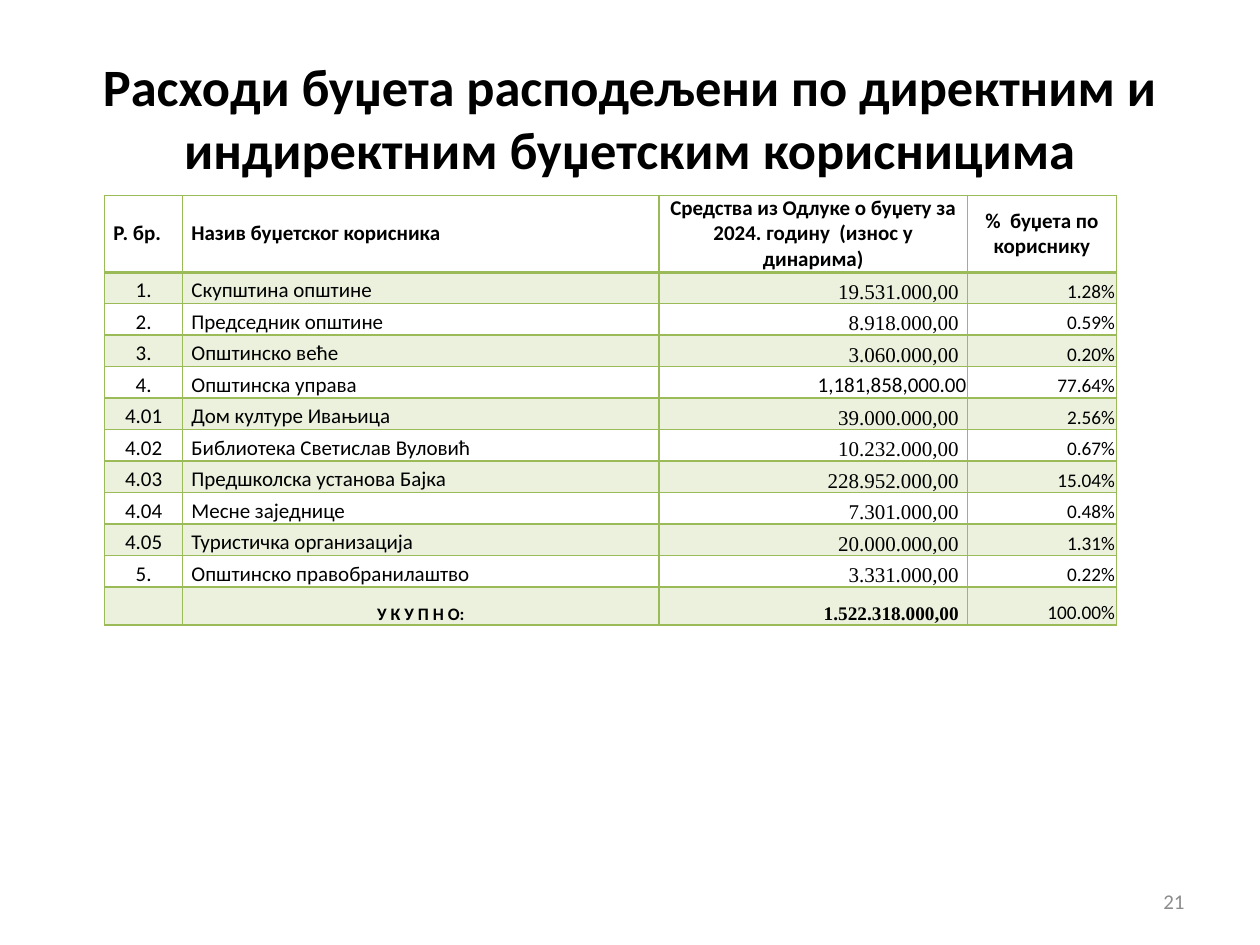
"""Build the budget slide: expenditure by direct and indirect budget users."""
from dataclasses import dataclass

from lxml import etree
from pptx import Presentation
from pptx.dml.color import RGBColor
from pptx.enum import text
from pptx.oxml.ns import qn
from pptx.util import Inches, Pt

COLORS = {"ink": "000000", "green": "9BBB59", "number": "8C8C8C"}
SANS, SERIF = "Calibri", "Times New Roman"
LEFT, CENTER, RIGHT = text.PP_ALIGN.LEFT, text.PP_ALIGN.CENTER, text.PP_ALIGN.RIGHT
MIDDLE, BOTTOM = text.MSO_ANCHOR.MIDDLE, text.MSO_ANCHOR.BOTTOM
WIDE, NARROW = 0.07, 0.01
COLUMNS = (0.62, 3.78, 2.45, 1.18)
HEADER_HEIGHT, ROW_HEIGHT, TOTAL_HEIGHT = 0.61, 0.25, 0.3


@dataclass(frozen=True)
class Style:
    size: float = 12
    font: str = SANS
    bold: bool = False
    align: text.PP_ALIGN = LEFT
    anchor: text.MSO_ANCHOR = BOTTOM
    inset: float = WIDE
    color: str = "ink"


HEADER_LEFT = Style(bold=True, anchor=MIDDLE)
HEADER_CENTER = Style(bold=True, anchor=MIDDLE, align=CENTER)
HEADER_STYLES = (HEADER_LEFT, HEADER_LEFT, HEADER_CENTER, HEADER_CENTER)
PERCENT = Style(size=11, align=RIGHT, inset=NARROW)
BODY_STYLES = (Style(align=CENTER), Style(), Style(font=SERIF, align=RIGHT), PERCENT)
TOTAL_STYLES = (
    Style(size=10, align=CENTER),
    Style(size=10, bold=True, align=CENTER),
    Style(size=11, font=SERIF, bold=True, align=RIGHT),
    PERCENT,
)
ADMINISTRATION_AMOUNT = Style(align=RIGHT, inset=NARROW)

TITLE = "Расходи буџета расподељени по директним и индиректним буџетским корисницима"
HEADER = (
    "Р. бр.",
    "Назив буџетског корисника",
    "Средства из Одлуке о буџету за 2024. годину  (износ у динарима)",
    "%  буџета по кориснику",
)
USERS = (
    ("1.", "Скупштина општине", "19.531.000,00", "1.28%"),
    ("2.", "Председник општине", "8.918.000,00", "0.59%"),
    ("3.", "Општинско веће", "3.060.000,00", "0.20%"),
    ("4.", "Општинска управа", "1,181,858,000.00", "77.64%"),
    ("4.01", "Дом културе Ивањица", "39.000.000,00", "2.56%"),
    ("4.02", "Библиотека Светислав Вуловић", "10.232.000,00", "0.67%"),
    ("4.03", "Предшколска установа Бајка", "228.952.000,00", "15.04%"),
    ("4.04", "Месне заједнице", "7.301.000,00", "0.48%"),
    ("4.05", "Туристичка организација", "20.000.000,00", "1.31%"),
    ("5.", "Општинско правобранилаштво", "3.331.000,00", "0.22%"),
)
TOTAL = ("", "У К У П Н О:", "1.522.318.000,00", "100.00%")


def write(tf, content: str, style: Style) -> None:
    p = tf.paragraphs[0]
    p.alignment = style.align
    r = p.add_run()
    r.text = content
    formats = {"size": Pt(style.size), "name": style.font, "bold": style.bold}
    for name, value in formats.items():
        setattr(r.font, name, value)
    r.font.color.rgb = RGBColor.from_string(COLORS[style.color])


def set_borders(cell, bottom: float, top: float) -> None:
    pr = cell._tc.get_or_add_tcPr()
    widths = {"a:lnL": 1, "a:lnR": 1, "a:lnT": top, "a:lnB": bottom}
    for position, (tag, width) in enumerate(widths.items()):
        line = etree.Element(qn(tag), w=str(Pt(width)))
        fill = etree.SubElement(line, qn("a:solidFill"))
        etree.SubElement(fill, qn("a:srgbClr"), val=COLORS["green"])
        pr.insert(position, line)


def set_fill(cell, shaded: bool) -> None:
    if not shaded:
        cell.fill.background()
        return
    cell.fill.solid()
    cell.fill.fore_color.rgb = RGBColor.from_string(COLORS["green"])
    color = cell._tc.tcPr.find(".//" + qn("a:srgbClr"))
    etree.SubElement(color, qn("a:alpha"), val="20000")


def draw_cell(cell, content: str, style: Style, row: int) -> None:
    formats = {
        "margin_left": Inches(style.inset),
        "margin_right": Inches(style.inset),
        "margin_top": Inches(NARROW if style.inset == NARROW else 0),
        "margin_bottom": 0,
        "vertical_anchor": style.anchor,
    }
    for name, value in formats.items():
        setattr(cell, name, value)
    write(cell.text_frame, content, style)
    set_fill(cell, shaded=row % 2 == 1)
    set_borders(cell, bottom=2 if row == 0 else 1, top=2 if row == 1 else 1)


def draw_table(s) -> None:
    rows = (HEADER, *USERS, TOTAL)
    heights = (HEADER_HEIGHT, *[ROW_HEIGHT] * len(USERS), TOTAL_HEIGHT)
    styles = (HEADER_STYLES, *[BODY_STYLES] * len(USERS), TOTAL_STYLES)
    table = s.shapes.add_table(
        len(rows), len(COLUMNS), Inches(0.83), Inches(1.55),
        Inches(sum(COLUMNS)), Inches(sum(heights)),
    ).table
    for column, width in zip(table.columns, COLUMNS):
        column.width = Inches(width)
    for i, (row, height) in enumerate(zip(rows, heights)):
        table.rows[i].height = Inches(height)
        for j, content in enumerate(row):
            style = ADMINISTRATION_AMOUNT if (row[0], j) == ("4.", 2) else styles[i][j]
            draw_cell(table.cell(i, j), content, style, i)


def draw_text(sp, box: tuple[float, ...], content: str, style: Style) -> None:
    for name, value in zip(("left", "top", "width", "height"), box):
        setattr(sp, name, Inches(value))
    tf = sp.text_frame
    formats = {
        "word_wrap": True,
        "auto_size": text.MSO_AUTO_SIZE.NONE,
        "vertical_anchor": style.anchor,
    }
    for name, value in formats.items():
        setattr(tf, name, value)
    write(tf, content, style)


def main() -> None:
    prs = Presentation()
    prs.slide_width, prs.slide_height = Inches(10), Inches(7.5)
    s = prs.slides.add_slide(prs.slide_layouts[5])
    draw_text(s.shapes.title, (0.5, 0.3, 9, 1.25), TITLE,
              Style(size=30, bold=True, align=CENTER, anchor=MIDDLE))
    draw_table(s)
    draw_text(s.shapes.add_textbox(0, 0, 0, 0), (7.17, 6.95, 2.33, 0.4), "21",
              Style(align=RIGHT, anchor=MIDDLE, color="number"))
    prs.save("out.pptx")


if __name__ == "__main__":
    main()
